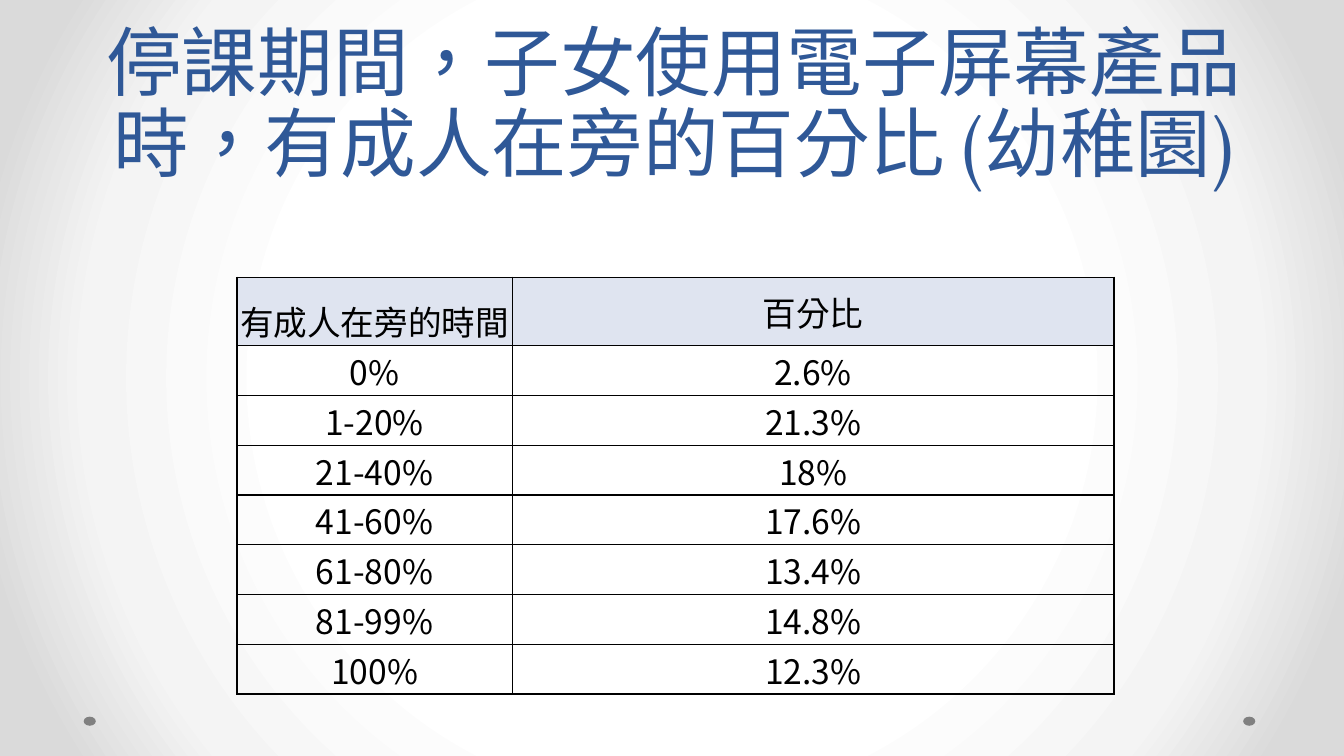
from lxml import etree
from pptx import Presentation
from pptx import util as u
from pptx.dml.color import RGBColor
from pptx.enum import lang, shapes, text
from pptx.oxml import parse_xml
from pptx.oxml.ns import nsdecls, qn

TITLE = "停課期間，子女使用電子屏幕產品時，有成人在旁的百分比 (幼稚園)"
ROWS = [
    ("有成人在旁的時間", "百分比"),
    ("0%", "2.6%"),
    ("1-20%", "21.3%"),
    ("21-40%", "18%"),
    ("41-60%", "17.6%"),
    ("61-80%", "13.4%"),
    ("81-99%", "14.8%"),
    ("100%", "12.3%"),
]
COLORS = {"title": "2F5897", "text": "000000", "border": "000000",
          "header": "DFE4F0", "dot": "808080"}
BACKGROUND_STOPS = [(50, "FFFFFF"), (76, "F4F4F4"), (92, "DADADA")]
CJK_FONT = "Noto Sans CJK SC"
TITLE_FONT = "Vollkorn"

SLIDE_WIDTH, SLIDE_HEIGHT = 13.33, 7.5
TABLE_LEFT, TABLE_TOP = 2.35, 2.75
COLUMN_WIDTHS = (2.73, 5.97)
HEADER_HEIGHT, ROW_HEIGHT = 0.68, 0.4
DOT_LEFTS, DOT_TOP, DOT_SIZE = (0.83, 12.33), 7.11, (0.12, 0.09)


def write(frame, content, size, color, font=CJK_FONT, spacing=None):
    paragraph = frame.paragraphs[0]
    paragraph.alignment = text.PP_ALIGN.CENTER
    if spacing:
        paragraph.line_spacing = u.Pt(spacing)
    run = paragraph.add_run()
    run.text = content
    run.font.size = u.Pt(size)
    run.font.name = font
    run.font.color.rgb = RGBColor.from_string(color)
    run.font.language_id = lang.MSO_LANGUAGE_ID.TRADITIONAL_CHINESE
    east_asian = etree.SubElement(run.font._element, qn("a:ea"))
    east_asian.set("typeface", CJK_FONT)


def paint_background(slide):
    fill = slide.background.fill
    fill.gradient()
    stops = "".join(
        f'<a:gs pos="{position * 1000}"><a:srgbClr val="{color}"/></a:gs>'
        for position, color in BACKGROUND_STOPS)
    gradient = parse_xml(
        f'<a:gradFill {nsdecls("a")} rotWithShape="1"><a:gsLst>{stops}</a:gsLst>'
        '<a:path path="circle"><a:fillToRect l="50000" t="50000" r="50000" b="50000"/>'
        '</a:path></a:gradFill>')
    current = slide._element.find(".//" + qn("a:gradFill"))
    current.getparent().replace(current, gradient)


def add_borders(cell):
    properties = cell._tc.get_or_add_tcPr()
    for index, side in enumerate(("lnL", "lnR", "lnT", "lnB")):
        properties.insert(index, parse_xml(
            f'<a:{side} {nsdecls("a")} w="12700"><a:solidFill>'
            f'<a:srgbClr val="{COLORS["border"]}"/></a:solidFill></a:{side}>'))


def add_dots(slide):
    for left in DOT_LEFTS:
        dot = slide.shapes.add_shape(
            shapes.MSO_SHAPE.OVAL, u.Inches(left), u.Inches(DOT_TOP),
            *map(u.Inches, DOT_SIZE))
        dot.shadow.inherit = False
        dot.fill.solid()
        dot.fill.fore_color.rgb = RGBColor.from_string(COLORS["dot"])
        dot.line.fill.background()


def add_title(slide):
    title = slide.shapes.title
    title.left, title.top = u.Inches(0.68), u.Inches(0.15)
    title.width, title.height = u.Inches(12), u.Inches(1.75)
    frame = title.text_frame
    frame.word_wrap = True
    frame.auto_size = text.MSO_AUTO_SIZE.NONE
    frame.vertical_anchor = text.MSO_ANCHOR.BOTTOM
    write(frame, TITLE, 54, COLORS["title"], font=TITLE_FONT, spacing=58)


def add_percentages(slide):
    heights = [HEADER_HEIGHT] + [ROW_HEIGHT] * (len(ROWS) - 1)
    table = slide.shapes.add_table(
        len(ROWS), len(COLUMN_WIDTHS), u.Inches(TABLE_LEFT), u.Inches(TABLE_TOP),
        u.Inches(sum(COLUMN_WIDTHS)), u.Inches(sum(heights))).table
    table.first_row = table.horz_banding = False
    for column, width in zip(table.columns, COLUMN_WIDTHS):
        column.width = u.Inches(width)
    for row_index, values in enumerate(ROWS):
        table.rows[row_index].height = u.Inches(heights[row_index])
        for column_index, value in enumerate(values):
            cell = table.cell(row_index, column_index)
            cell.margin_left = cell.margin_right = cell.margin_top = u.Inches(0.01)
            cell.margin_bottom = 0
            cell.vertical_anchor = text.MSO_ANCHOR.TOP
            if row_index == 0:
                cell.fill.solid()
                cell.fill.fore_color.rgb = RGBColor.from_string(COLORS["header"])
                cell.vertical_anchor = (text.MSO_ANCHOR.BOTTOM if column_index == 0
                                        else text.MSO_ANCHOR.MIDDLE)
            else:
                cell.fill.background()
            add_borders(cell)
            write(cell.text_frame, value, 24, COLORS["text"])


def main():
    presentation = Presentation()
    presentation.slide_width = u.Inches(SLIDE_WIDTH)
    presentation.slide_height = u.Inches(SLIDE_HEIGHT)
    slide = presentation.slides.add_slide(presentation.slide_layouts[5])
    paint_background(slide)
    add_dots(slide)
    add_title(slide)
    add_percentages(slide)
    presentation.save("out.pptx")


if __name__ == "__main__":
    main()
